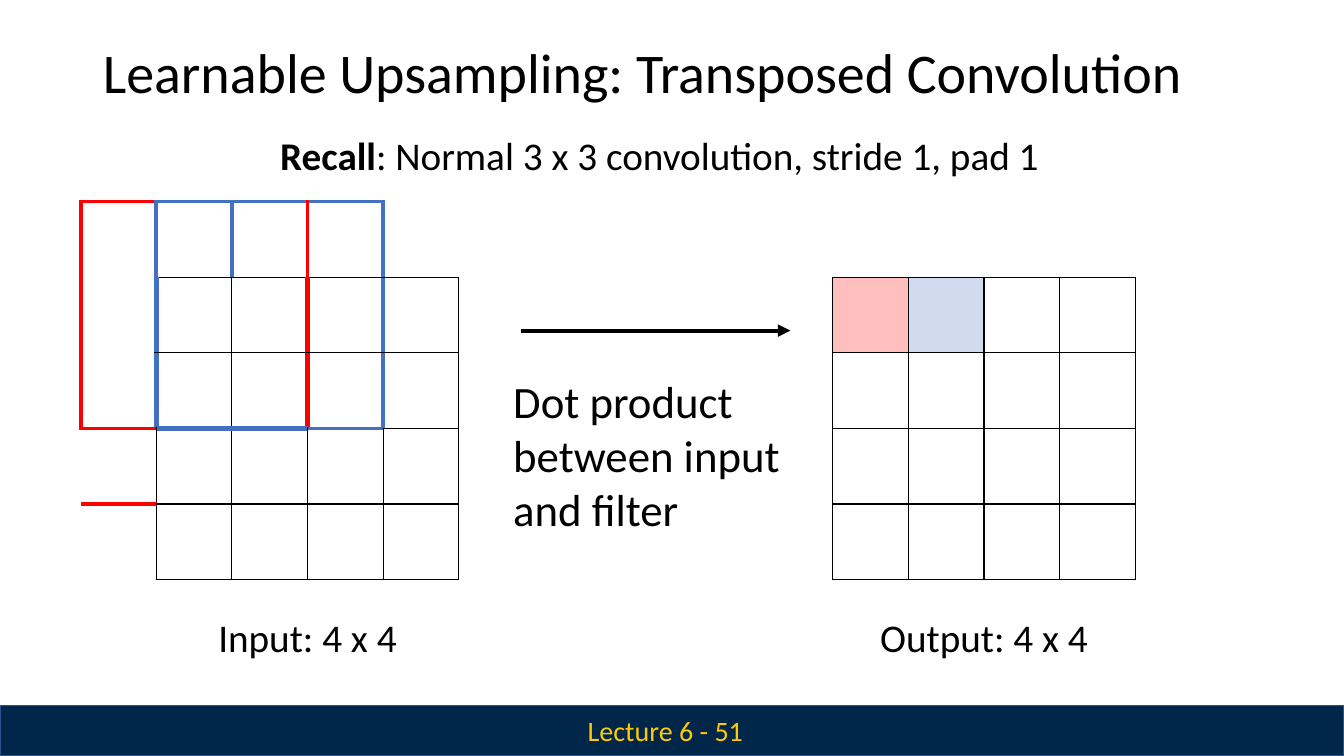
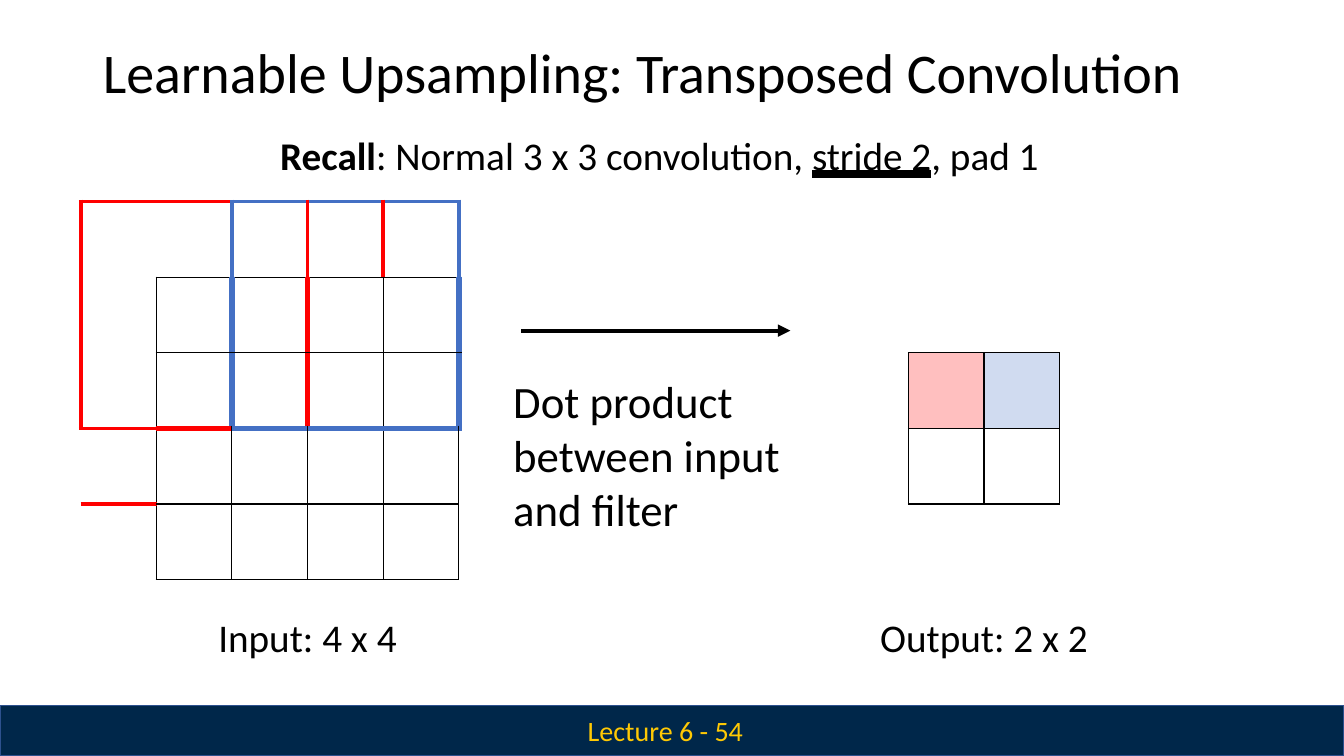
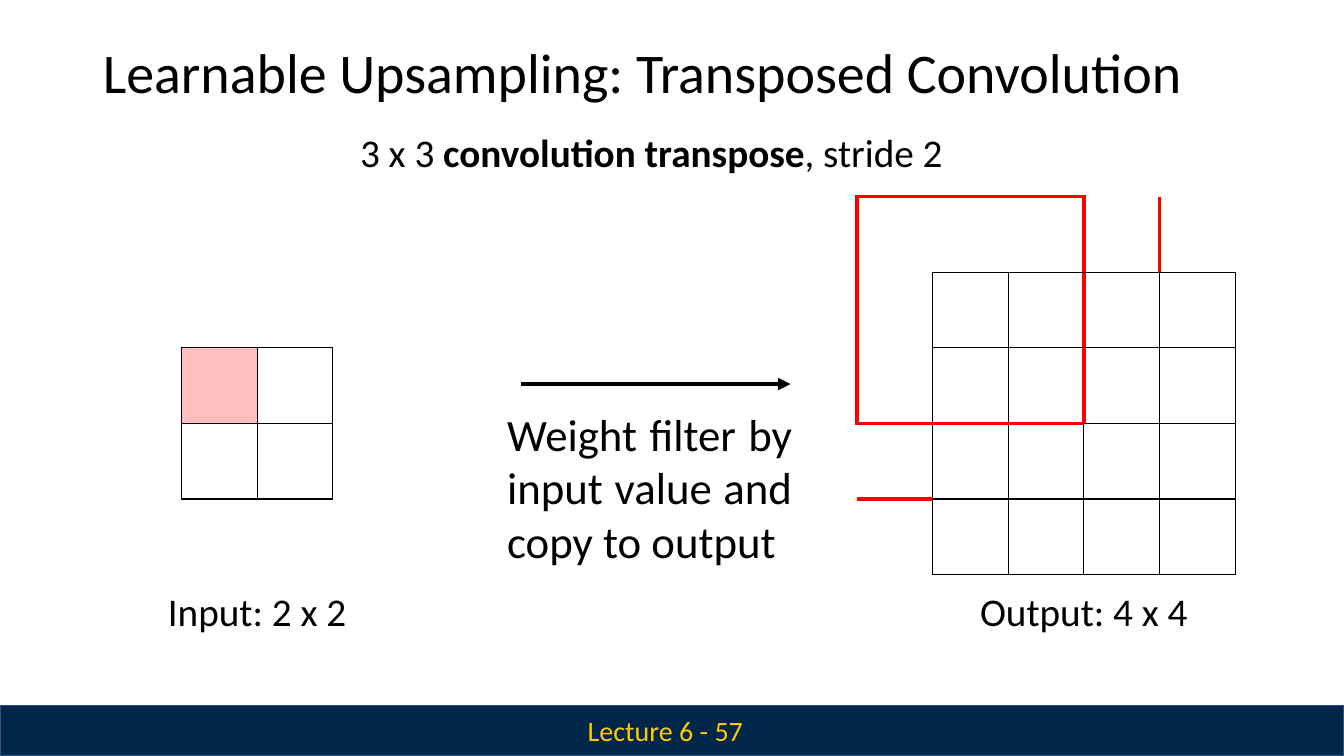
"""Three lecture slides on transposed convolution."""
from lxml import etree
from pptx import Presentation
from pptx.dml.color import RGBColor
from pptx.enum.shapes import MSO_CONNECTOR, MSO_SHAPE
from pptx.enum.text import MSO_UNDERLINE, PP_ALIGN
from pptx.oxml.ns import qn
from pptx.util import Inches, Pt

BOX, LINE = MSO_SHAPE.RECTANGLE, MSO_CONNECTOR.STRAIGHT
HEAVY = MSO_UNDERLINE.HEAVY_LINE
LEFT, MID, JUST = PP_ALIGN.LEFT, PP_ALIGN.CENTER, PP_ALIGN.JUSTIFY
FONT, PLAIN = "Calibri", "{2D5ABB26-0587-4C30-8999-92F81FD0307C}"
BLACK, RED, BLUE = "000000", "FF0000", "4470C4"
NAVY, EDGE, GOLD = "00274A", "2D518E", "FFC904"
WIDE, HIGH, BAND = 13.33, 7.5, 0.5
CELL, FILTER = 0.75, 3
THIN, FIRM, THICK = 1, 3, 4.5
TITLE = "Learnable Upsampling: Transposed Convolution"
DOT = "Dot product between input and filter"
COPY = "Weight filter by input value and copy to output"

RECALL = {"mid": 4.25, "head": (6.54, 1.29), "label": 6.07,
          "arrow": 3.28, "note": (5.09, 3.7, 2.75, DOT, LEFT)}
WEIGH = {"mid": 4.2, "head": (6.46, 1.26), "label": 5.82,
         "arrow": 3.81, "note": (5.03, 4.02, 2.83, COPY, JUST)}

SLIDES = [
    {"page": 51, **RECALL,
     "runs": [("Recall", "b"), (": Normal 3 x 3 convolution, stride 1, pad 1", "")],
     "grids": [
         {"name": "Input", "x": 3.05, "size": 4, "filters": [(RED, 0), (BLUE, 1)], "bold": 3},
         {"name": "Output", "x": 9.76, "size": 4, "tints": [RED, BLUE]}]},
    {"page": 54, **RECALL,
     "runs": [("Recall", "b"), (": Normal 3 x 3 convolution, ", ""), ("stride 2", "u"), (", pad 1", "")],
     "grids": [
         {"name": "Input", "x": 3.05, "size": 4, "filters": [(RED, 0), (BLUE, 2)], "bold": 5},
         {"name": "Output", "x": 9.76, "size": 2, "tints": [RED, BLUE]}]},
    {"page": 57, **WEIGH,
     "runs": [("3 x 3 ", ""), ("convolution transpose", "b"), (", stride 2", "")],
     "grids": [
         {"name": "Output", "x": 10.75, "size": 4, "filters": [(RED, 0)]},
         {"name": "Input", "x": 2.55, "size": 2, "tints": [RED]}]},
]


def rgb(code):
    return RGBColor.from_string(code)


def node(top, tag, **attrs):
    return etree.SubElement(top, qn(tag), attrs)


def write(slide, x, y, wide, runs, size, color=BLACK, align=LEFT):
    if align == MID:
        x -= wide / 2
    area = map(Inches, (x, y, wide, size / 60))
    frame = slide.shapes.add_textbox(*area).text_frame
    frame.word_wrap = True
    frame.margin_left = frame.margin_right = frame.margin_bottom = 0
    frame.margin_top = Inches(0.01)
    para = frame.paragraphs[0]
    para.alignment = align
    for text, look in runs:
        run = para.add_run()
        run.text = text
        font = run.font
        font.name, font.size, font.color.rgb = FONT, Pt(size), rgb(color)
        font.bold = look == "b"
        if look == "u":
            font.underline = HEAVY


def square(left, top, size):
    for k in range(size):
        for side in (0, size):
            yield "h", left + k, top + side
            yield "v", left + side, top + k


def pens(size, pad, filters, bold):
    found = {}
    for r in range(size):
        for c in range(size):
            found.update({key: (BLACK, THIN) for key in square(c + pad, r + pad, 1)})
    for color, start in filters:
        for key in square(start, 0, FILTER):
            way, c, r = key
            end = c + (way == "h")
            thick = r >= pad and c >= pad and end <= bold
            found[key] = (color, THICK if thick else FIRM)
    return found


def border(cell, found, r, c):
    sides = {"L": ("v", c, r), "R": ("v", c + 1, r), "T": ("h", c, r), "B": ("h", c, r + 1)}
    drawn = [(side, found[key]) for side, key in sides.items() if key in found]
    for place, (side, (color, width)) in enumerate(drawn):
        line = etree.Element(qn("a:ln" + side), w=str(Pt(width)))
        node(node(line, "a:solidFill"), "a:srgbClr", val=color)
        cell._tc.get_or_add_tcPr().insert(place, line)


def grid(slide, x, y, size, filters=(), bold=0, tints=()):
    pad = 1 if filters else 0
    count = size + pad
    left, top = (mid - (size / 2 + pad) * CELL for mid in (x, y))
    area = map(Inches, (left, top, count * CELL, count * CELL))
    table = slide.shapes.add_table(count, count, *area).table
    table.first_row = table.horz_banding = False
    table._tbl.tblPr.find(qn("a:tableStyleId")).text = PLAIN
    found = pens(size, pad, filters, bold)
    for r in range(count):
        for c in range(count):
            cell = table.cell(r, c)
            if r == 0 and c < len(tints):
                cell.fill.solid()
                cell.fill.fore_color.rgb = rgb(tints[c])
                node(cell._tc.tcPr.find(".//" + qn("a:srgbClr")), "a:alpha", val="25000")
            else:
                cell.fill.background()
            border(cell, found, r, c)


def arrow(slide, y):
    line = slide.shapes.add_connector(LINE, *map(Inches, (5.17, y, 7.84, y)))
    line.line.color.rgb, line.line.width = rgb(BLACK), Pt(FIRM)
    node(line.line._get_or_add_ln(), "a:tailEnd", type="triangle")
    node(line._element.spPr, "a:effectLst")


def frame(slide, page):
    band = slide.shapes.add_shape(BOX, *map(Inches, (0, HIGH - BAND, WIDE, BAND)))
    band.shadow.inherit = False
    band.fill.solid()
    band.fill.fore_color.rgb = rgb(NAVY)
    band.line.color.rgb, band.line.width = rgb(EDGE), Pt(THIN)
    write(slide, 1.02, 0.36, 11.8, [(TITLE, "")], 40)
    write(slide, 6.6, 7.07, 2, [(f"Lecture 6 - {page}", "")], 20, GOLD, MID)


def main():
    deck = Presentation()
    deck.slide_width, deck.slide_height = Inches(WIDE), Inches(HIGH)
    for data in SLIDES:
        slide = deck.slides.add_slide(deck.slide_layouts[6])
        frame(slide, data["page"])
        write(slide, *data["head"], 8, data["runs"], 28, align=MID)
        for part in data["grids"]:
            name, x, size = part["name"], part["x"], part["size"]
            grid(slide, x, data["mid"], size, part.get("filters", ()),
                 part.get("bold", 0), part.get("tints", ()))
            label = f"{name}: {size} x {size}"
            write(slide, x, data["label"], 3, [(label, "")], 28, align=MID)
        arrow(slide, data["arrow"])
        x, y, wide, text, align = data["note"]
        write(slide, x, y, wide, [(text, "")], 32, align=align)
    deck.save("out.pptx")


if __name__ == "__main__":
    main()
